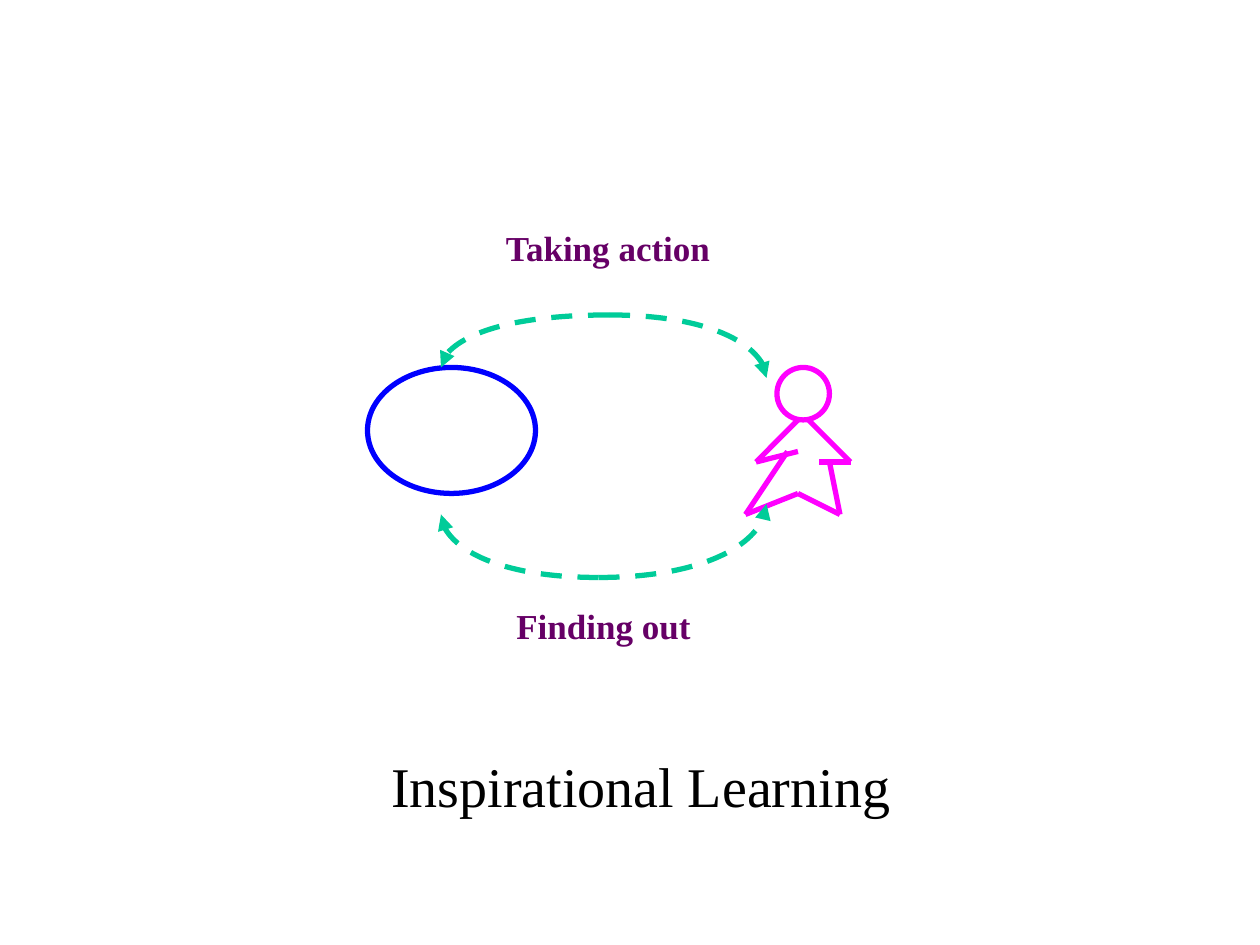
from lxml.etree import SubElement
from pptx import Presentation
from pptx.dml.color import RGBColor
from pptx.enum.dml import MSO_LINE
from pptx.enum.shapes import MSO_CONNECTOR, MSO_SHAPE
from pptx.enum.text import MSO_ANCHOR, MSO_AUTO_SIZE, PP_ALIGN
from pptx.oxml.ns import qn
from pptx.util import Pt

PX = 9525  # EMU per px, 96 px to the inch
COLORS = {
    "person": "FF00FF",
    "situation": "0000FF",
    "arrow": "00CC99",
    "label": "660066",
    "title": "000000",
}
CURVE = 0.55  # control point distance that makes a quarter ellipse


def style_line(shape, color):
    shape.line.color.rgb = RGBColor.from_string(COLORS[color])
    shape.line.width = Pt(3)


def set_text(shape, text, size, color, bold):
    frame = shape.text_frame
    frame.text = text
    frame.word_wrap = False
    frame.auto_size = MSO_AUTO_SIZE.NONE
    frame.vertical_anchor = MSO_ANCHOR.TOP
    paragraph = frame.paragraphs[0]
    paragraph.alignment = PP_ALIGN.LEFT
    paragraph.font.name = "Times New Roman"
    paragraph.font.size = Pt(size)
    paragraph.font.bold = bold
    paragraph.font.color.rgb = RGBColor.from_string(COLORS[color])


presentation = Presentation()
presentation.slide_width = 960 * PX
presentation.slide_height = 720 * PX
slide = presentation.slides.add_slide(presentation.slide_layouts[5])
shapes = slide.shapes

# Title below the diagram
title = shapes.title
title.left, title.top, title.width, title.height = (
    264 * PX, 568 * PX, 423 * PX, 60 * PX)
set_text(title, "Inspirational Learning", 32, "title", False)
title.text_frame.margin_left = 34 * PX
title.text_frame.margin_right = 0

# Head of the person and the situation
for color, left, top, width, height in [
    ("person", 592, 280, 40, 40),
    ("situation", 280, 280, 128, 96),
]:
    ellipse = shapes.add_shape(
        MSO_SHAPE.OVAL, left * PX, top * PX, width * PX, height * PX)
    ellipse.shadow.inherit = False
    ellipse.fill.background()
    style_line(ellipse, color)

# Body of the person
for x1, y1, x2, y2 in [
    (608, 320, 576, 352),
    (616, 320, 648, 352),
    (576, 352, 608, 344),
    (624, 352, 648, 352),
    (600, 344, 568, 392),
    (568, 392, 608, 376),
    (608, 376, 640, 392),
    (632, 352, 640, 392),
]:
    limb = shapes.add_connector(
        MSO_CONNECTOR.STRAIGHT, x1 * PX, y1 * PX, x2 * PX, y2 * PX)
    style_line(limb, "person")
    SubElement(limb._element.spPr, qn("a:effectLst"))

# Dashed quarter ellipses, each running from the middle to its arrowhead
for start_x, start_y, end_x, end_y in [
    (456, 440, 584, 384),
    (456, 440, 336, 392),
    (464, 240, 336, 280),
    (464, 240, 584, 288),
]:
    control_x = start_x + CURVE * (end_x - start_x)
    control_y = end_y + CURVE * (start_y - end_y)
    builder = shapes.build_freeform(start_x, start_y, scale=PX)
    builder.add_line_segments(
        [(control_x, start_y), (end_x, control_y), (end_x, end_y)], close=False)
    arc = builder.convert_to_shape()

    # Turn the three straight segments into one Bezier curve
    segments = list(arc._element.iter(qn("a:lnTo")))
    curve = SubElement(segments[0].getparent(), qn("a:cubicBezTo"))
    for segment in segments:
        curve.append(segment[0])
        segment.getparent().remove(segment)

    arc.shadow.inherit = False
    arc.fill.background()
    style_line(arc, "arrow")
    arc.line.dash_style = MSO_LINE.DASH
    SubElement(arc.line._get_or_add_ln(), qn("a:tailEnd"), type="triangle")

# Labels of the two arrows
for text, left, top, width in [
    ("Taking action", 376, 168, 177),
    ("Finding out", 384, 456, 152),
]:
    label = shapes.add_textbox(left * PX, top * PX, width * PX, 41 * PX)
    set_text(label, text, 20, "label", True)

presentation.save("out.pptx")
